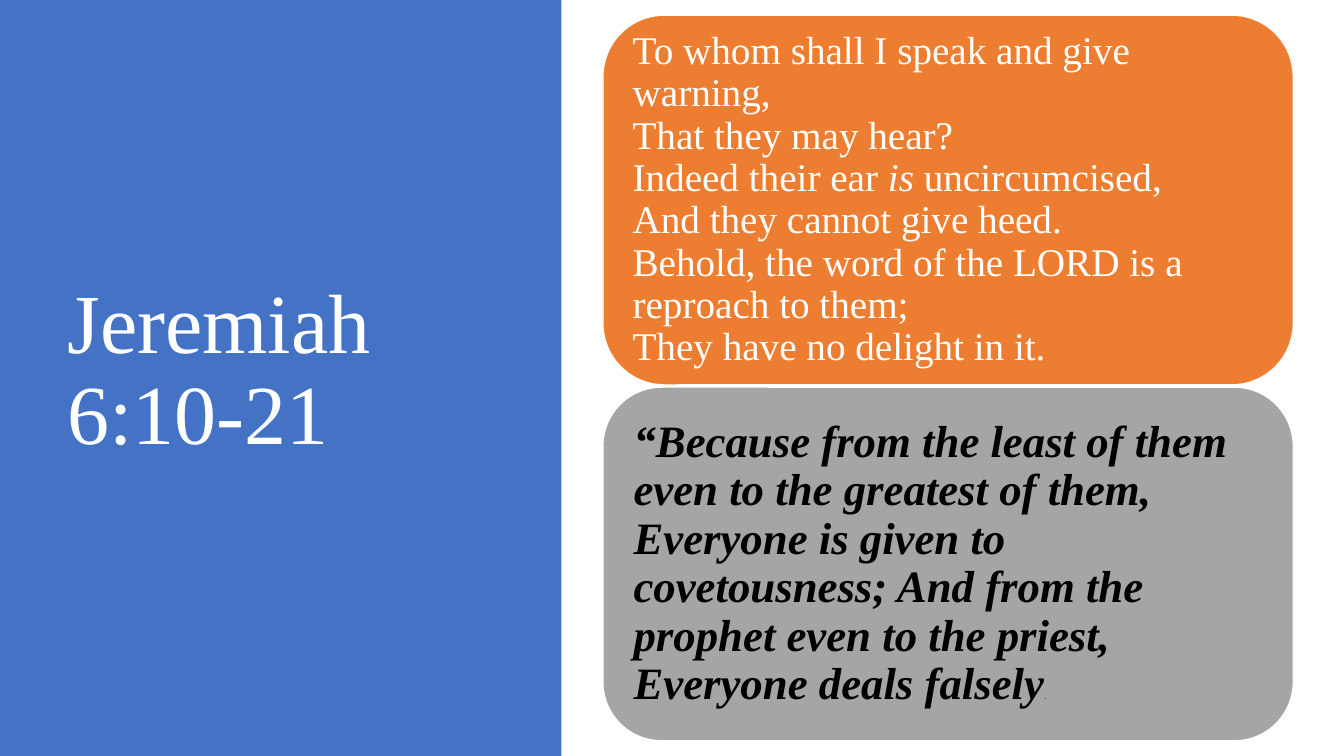
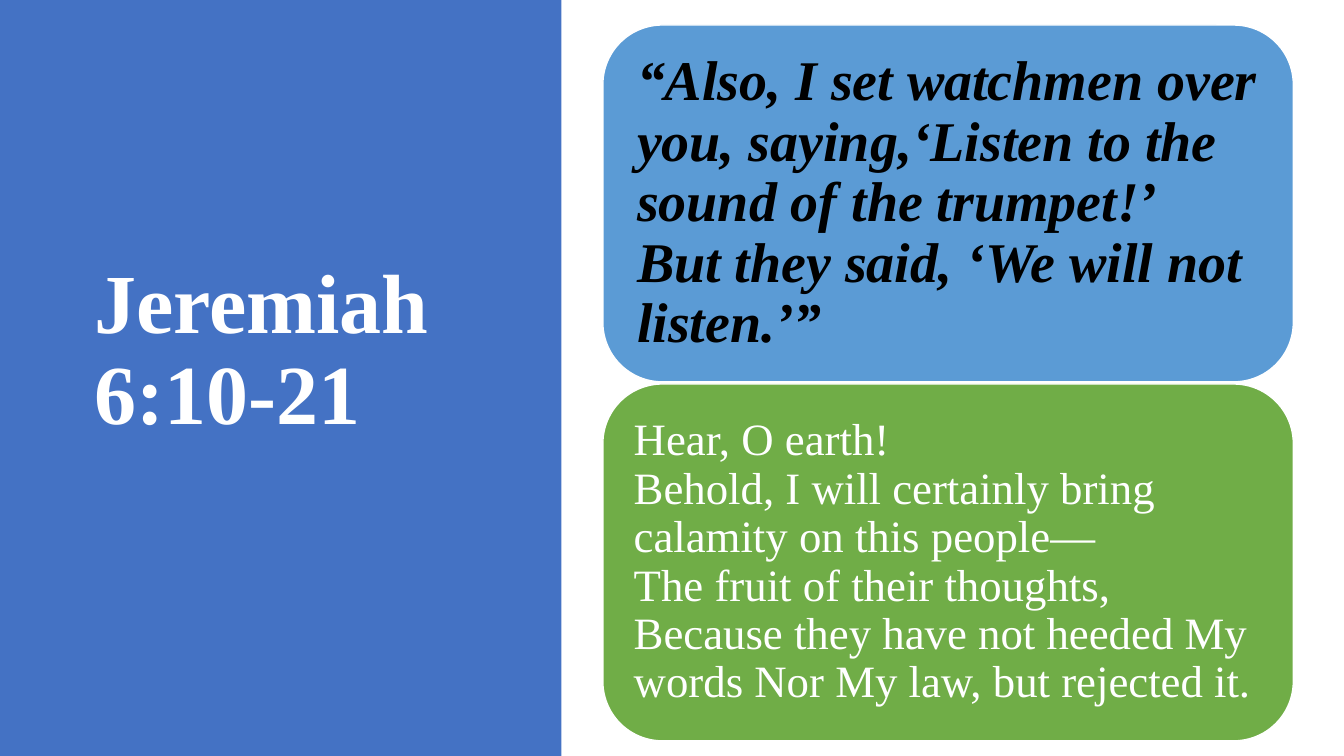
from dataclasses import dataclass

from pptx import Presentation
from pptx.dml.color import RGBColor
from pptx.enum.shapes import MSO_SHAPE
from pptx.enum.text import MSO_ANCHOR, MSO_AUTO_SIZE, PP_ALIGN
from pptx.util import Pt

RECT = MSO_SHAPE.RECTANGLE
ROUNDED = MSO_SHAPE.ROUNDED_RECTANGLE
MIDDLE = MSO_ANCHOR.MIDDLE
LEFT = PP_ALIGN.LEFT
NO_FIT = MSO_AUTO_SIZE.NONE
TITLE_ONLY = 5


@dataclass(frozen=True)
class Theme:
    """Colours, fonts and type sizes of the deck."""
    white: str = "FFFFFF"
    black: str = "000000"
    blue: str = "4472C4"
    orange: str = "ED7D31"
    grey: str = "A5A5A5"
    sky: str = "5B9BD5"
    green: str = "70AD47"
    serif: str = "Times New Roman"
    sans: str = "Calibri"
    title: float = 60
    large: float = 40
    medium: float = 32
    small: float = 28
    tiny: float = 5
    line_spacing: float = 0.9


THEME = Theme()

# Layout in points
SLIDE_W, SLIDE_H = 960, 540
BAND_W = 401
TITLE_W, TITLE_H = 299.5, 433.4
CARD_LEFT, CARD_W = 430.6, 493.2
CARDS_BOTTOM, CARD_GAP = 529.2, 1.5
INSET_PER_SIZE = 0.3


@dataclass(frozen=True)
class Span:
    text: str
    bold: bool = False
    italic: bool = False
    size: float | None = None
    font: str = THEME.serif


@dataclass(frozen=True)
class Verse:
    """One rounded card with a passage."""
    spans: tuple[Span, ...]
    fill: str
    color: str
    size: float
    height: float


@dataclass(frozen=True)
class Page:
    title: str
    title_left: float
    title_top: float
    title_bold: bool
    verses: tuple[Verse, ...]


PAGES = (
    Page("Jeremiah 6:10-21", 41, 49, False, (
        Verse((
            Span("To whom shall I speak and give warning,\n"
                 "That they may hear?\n"
                 "Indeed their ear "),
            Span("is", italic=True),
            Span(" uncircumcised,\n"
                 "And they cannot give heed.\n"
                 "Behold, the word of the LORD is a reproach to them;\n"
                 "They have no delight in it."),
        ), THEME.orange, THEME.white, THEME.small, 264.2),
        Verse((
            Span("“Because from the least of them even to the greatest of them,\n"
                 "Everyone is given to covetousness; "
                 "And from the prophet even to the priest,\n"
                 "Everyone deals falsely", bold=True, italic=True),
            Span(".", size=THEME.tiny, font=THEME.sans),
        ), THEME.grey, THEME.black, THEME.medium, 252.7),
    )),
    Page("Jeremiah 6:10-21", 60, 34.6, True, (
        Verse((
            Span("“Also, I set watchmen over you, saying,"
                 "‘Listen to the sound of the trumpet!’\n"
                 "But they said, ‘We will not listen.’”", bold=True, italic=True),
        ), THEME.sky, THEME.black, THEME.large, 254.9),
        Verse((
            Span("Hear, O earth!\n"
                 "Behold, I will certainly bring calamity on this people—\n"
                 "The fruit of their thoughts,\n"
                 "Because they have not heeded My words Nor My law, "
                 "but rejected it."),
        ), THEME.green, THEME.white, THEME.medium, 254.9),
    )),
)


def write(paragraph, text: str, *, size: float, color: str,
          font: str = THEME.serif, bold: bool = False,
          italic: bool = False) -> None:
    """Append formatted text; each newline becomes a line break."""
    for index, line in enumerate(text.split("\n")):
        if index:
            paragraph.add_line_break()
        run = paragraph.add_run()
        run.text = line
        run.font.name = font
        run.font.size = Pt(size)
        run.font.bold = bold
        run.font.italic = italic
        run.font.color.rgb = RGBColor.from_string(color)


def prepare_text(shape):
    """Set the common frame format and return the first paragraph."""
    frame = shape.text_frame
    frame.word_wrap = True
    frame.auto_size = NO_FIT
    frame.vertical_anchor = MIDDLE
    paragraph = frame.paragraphs[0]
    paragraph.alignment = LEFT
    paragraph.line_spacing = THEME.line_spacing
    return paragraph


def add_panel(slide, kind, left: float, top: float, width: float,
              height: float, fill: str, outline: str | None = None):
    panel = slide.shapes.add_shape(kind, Pt(left), Pt(top), Pt(width), Pt(height))
    panel.shadow.inherit = False
    panel.fill.solid()
    panel.fill.fore_color.rgb = RGBColor.from_string(fill)
    if outline:
        panel.line.color.rgb = RGBColor.from_string(outline)
        panel.line.width = Pt(1)
    else:
        panel.line.fill.background()
    return panel


def add_title(slide, page: Page) -> None:
    """Place the title over the blue side band."""
    title = slide.shapes.title
    band = add_panel(slide, RECT, 0, 0, BAND_W, SLIDE_H, THEME.blue)
    title.element.addprevious(band.element)
    title.left, title.top = Pt(page.title_left), Pt(page.title_top)
    title.width, title.height = Pt(TITLE_W), Pt(TITLE_H)
    write(prepare_text(title), page.title, size=THEME.title,
          color=THEME.white, bold=page.title_bold)


def add_verse(slide, verse: Verse, top: float) -> None:
    card = add_panel(slide, ROUNDED, CARD_LEFT, top, CARD_W, verse.height,
                     verse.fill, THEME.white)
    paragraph = prepare_text(card)
    frame = card.text_frame
    inset = Pt(verse.size * INSET_PER_SIZE)
    frame.margin_left = frame.margin_right = inset
    frame.margin_top = frame.margin_bottom = inset
    for span in verse.spans:
        write(paragraph, span.text, size=span.size or verse.size,
              color=verse.color, font=span.font, bold=span.bold,
              italic=span.italic)


def add_page(deck, page: Page) -> None:
    slide = deck.slides.add_slide(deck.slide_layouts[TITLE_ONLY])
    add_title(slide, page)
    # Cards are stacked so that the last one ends at the common bottom edge
    gaps = CARD_GAP * (len(page.verses) - 1)
    top = CARDS_BOTTOM - gaps - sum(verse.height for verse in page.verses)
    for verse in page.verses:
        add_verse(slide, verse, top)
        top += verse.height + CARD_GAP


def main() -> None:
    deck = Presentation()
    deck.slide_width, deck.slide_height = Pt(SLIDE_W), Pt(SLIDE_H)
    for page in PAGES:
        add_page(deck, page)
    deck.save("out.pptx")


if __name__ == "__main__":
    main()
